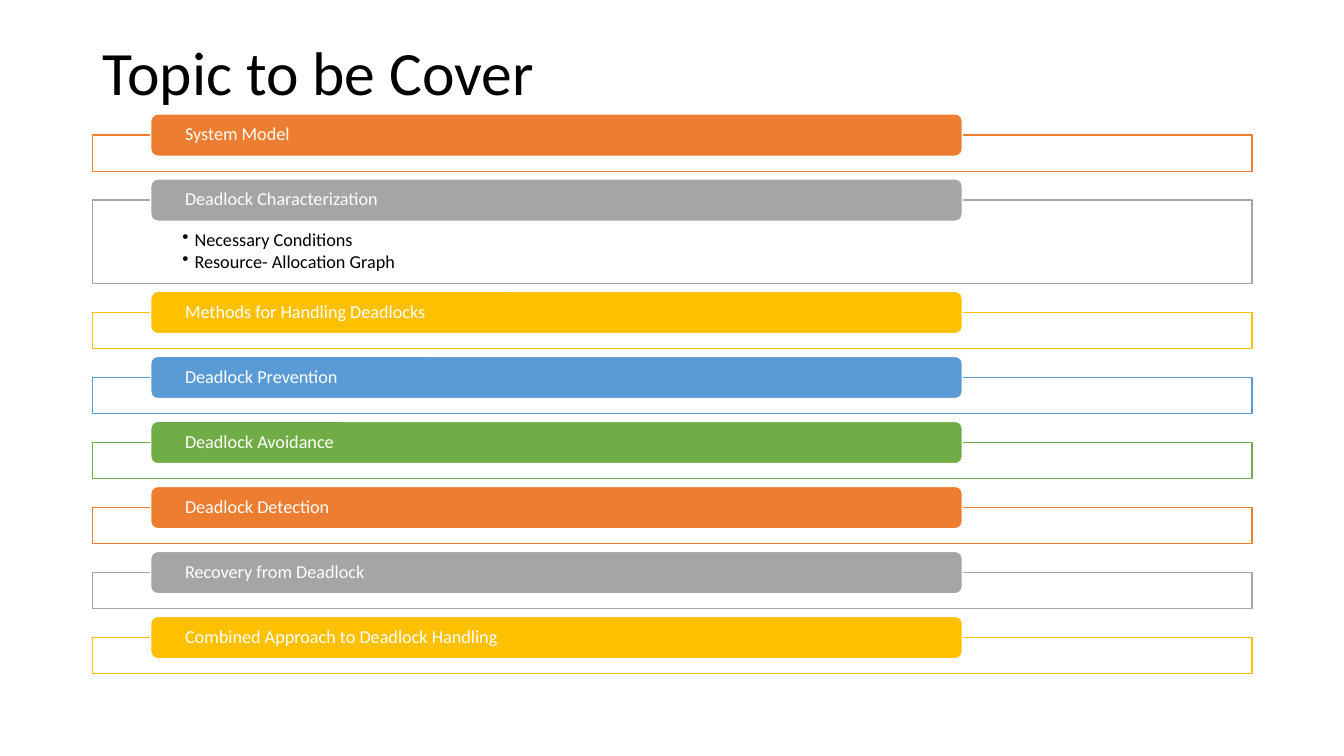
from lxml import etree
from pptx import Presentation
from pptx.dml.color import RGBColor
from pptx.enum.shapes import MSO_SHAPE as Shape
from pptx.enum.text import MSO_ANCHOR as Anchor, PP_ALIGN as Align
from pptx.oxml.ns import qn
from pptx.util import Inches, Pt

BLACK = RGBColor(0x00, 0x00, 0x00)
WHITE = RGBColor(0xFF, 0xFF, 0xFF)
ORANGE = RGBColor(0xED, 0x7D, 0x31)
GRAY = RGBColor(0xA5, 0xA5, 0xA5)
GOLD = RGBColor(0xFF, 0xC0, 0x00)
BLUE = RGBColor(0x5B, 0x9B, 0xD5)
GREEN = RGBColor(0x70, 0xAD, 0x47)

FONT = "Calibri"
SLIDE_W, SLIDE_H = 13.33, 7.5

# Shared column of title and list, and the row measures of the list
LEFT, WIDTH = 0.92, 11.5
LIST_TOP = 1.13
TAB_H = 0.42
FRAME_H, FRAME_H_BULLETS = 0.36, 0.83
ROW_GAP = 0.075

TOPICS = [
    ("System Model", ORANGE, []),
    ("Deadlock Characterization", GRAY,
     ["Necessary Conditions", "Resource- Allocation Graph"]),
    ("Methods for Handling Deadlocks", GOLD, []),
    ("Deadlock Prevention", BLUE, []),
    ("Deadlock Avoidance", GREEN, []),
    ("Deadlock Detection", ORANGE, []),
    ("Recovery from Deadlock", GRAY, []),
    ("Combined Approach to Deadlock Handling", GOLD, []),
]


def write(shape, lines, size, color, anchor, insets, space_after=0):
    frame = shape.text_frame
    frame.word_wrap = True
    frame.vertical_anchor = anchor
    (frame.margin_left, frame.margin_top,
     frame.margin_right, frame.margin_bottom) = map(Inches, insets)
    frame.text = "\n".join(lines)
    for paragraph in frame.paragraphs:
        paragraph.alignment = Align.LEFT
        paragraph.line_spacing = 0.9
        paragraph.space_after = Pt(space_after)
        font = paragraph.runs[0].font
        font.name, font.size, font.color.rgb = FONT, Pt(size), color


def add_bullet(paragraph):
    props = paragraph._p.get_or_add_pPr()
    props.set("marL", str(Inches(0.12)))
    props.set("indent", str(Inches(-0.12)))
    etree.SubElement(props, qn("a:buChar")).set("char", "•")


def add_panel(slide, kind, box, fill, line):
    panel = slide.shapes.add_shape(kind, *map(Inches, box))
    panel.shadow.inherit = False
    panel.fill.solid()
    panel.fill.fore_color.rgb = fill
    panel.line.color.rgb = line
    panel.line.width = Pt(1)
    return panel


def add_title(slide, box, title):
    heading = slide.shapes.add_textbox(*map(Inches, box))
    write(heading, [title], 44, BLACK, Anchor.MIDDLE, (0.1, 0.05, 0.1, 0.05))


def add_topic(slide, left, top, width, topic):
    """Draw one topic and return the bottom of its frame."""
    name, color, bullets = topic

    # Outlined frame, starting at half the tab's height
    frame_top = top + TAB_H / 2
    frame_h = FRAME_H_BULLETS if bullets else FRAME_H
    frame = add_panel(slide, Shape.RECTANGLE,
                      (left, frame_top, width, frame_h), WHITE, color)
    if bullets:
        write(frame, bullets, 13, BLACK, Anchor.TOP, (0.89, 0.3, 0.89, 0.1), 2)
        for paragraph in frame.text_frame.paragraphs:
            add_bullet(paragraph)

    # Coloured tab: 5% in from the left, 70% of the width
    tab = add_panel(slide, Shape.ROUNDED_RECTANGLE,
                    (left + 0.05 * width, top, 0.7 * width, TAB_H),
                    color, WHITE)
    write(tab, [name], 13, WHITE, Anchor.MIDDLE, (0.32, 0, 0.32, 0))
    return frame_top + frame_h


def add_topic_list(slide, left, top, width, topics):
    for topic in topics:
        top = add_topic(slide, left, top, width, topic) + ROW_GAP


def main():
    deck = Presentation()
    deck.slide_width, deck.slide_height = Inches(SLIDE_W), Inches(SLIDE_H)
    slide = deck.slides.add_slide(deck.slide_layouts[6])
    add_title(slide, (LEFT, 0.02, WIDTH, 1.45), "Topic to be Cover")
    add_topic_list(slide, LEFT, LIST_TOP, WIDTH, TOPICS)
    deck.save("out.pptx")


if __name__ == "__main__":
    main()
